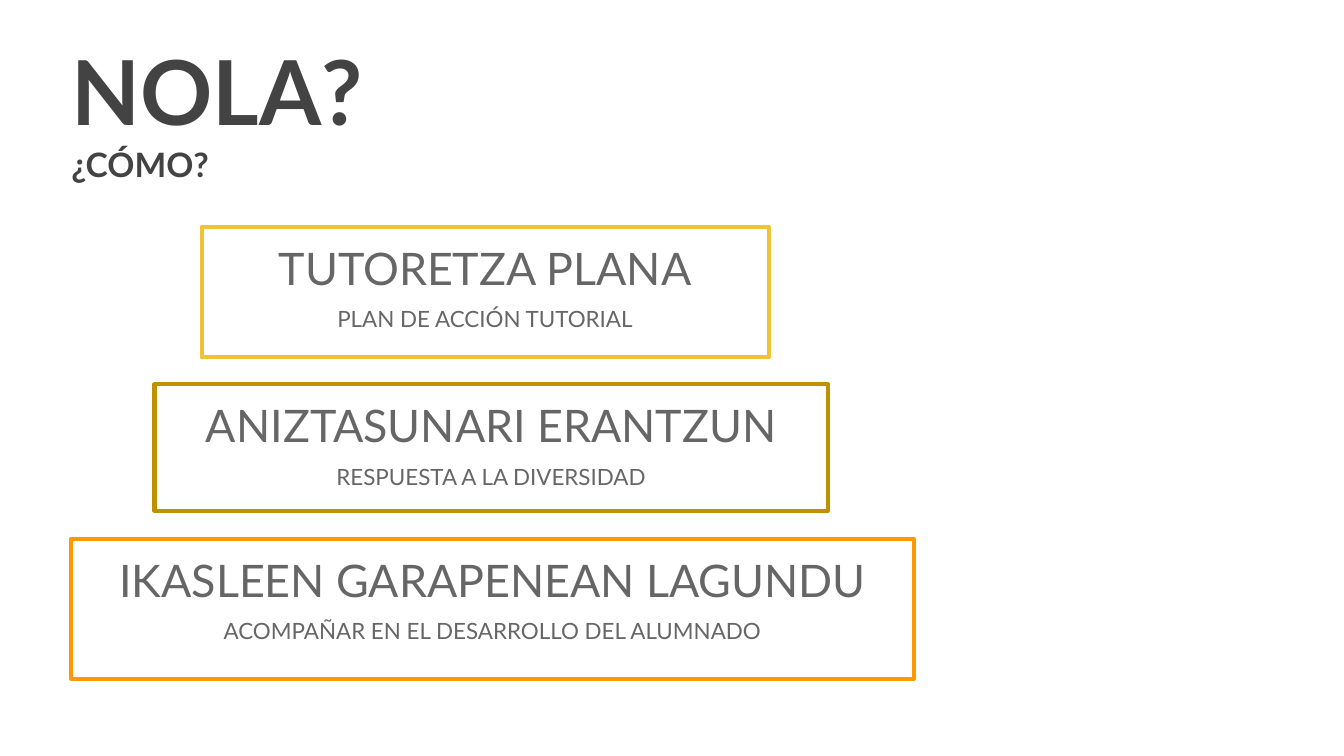
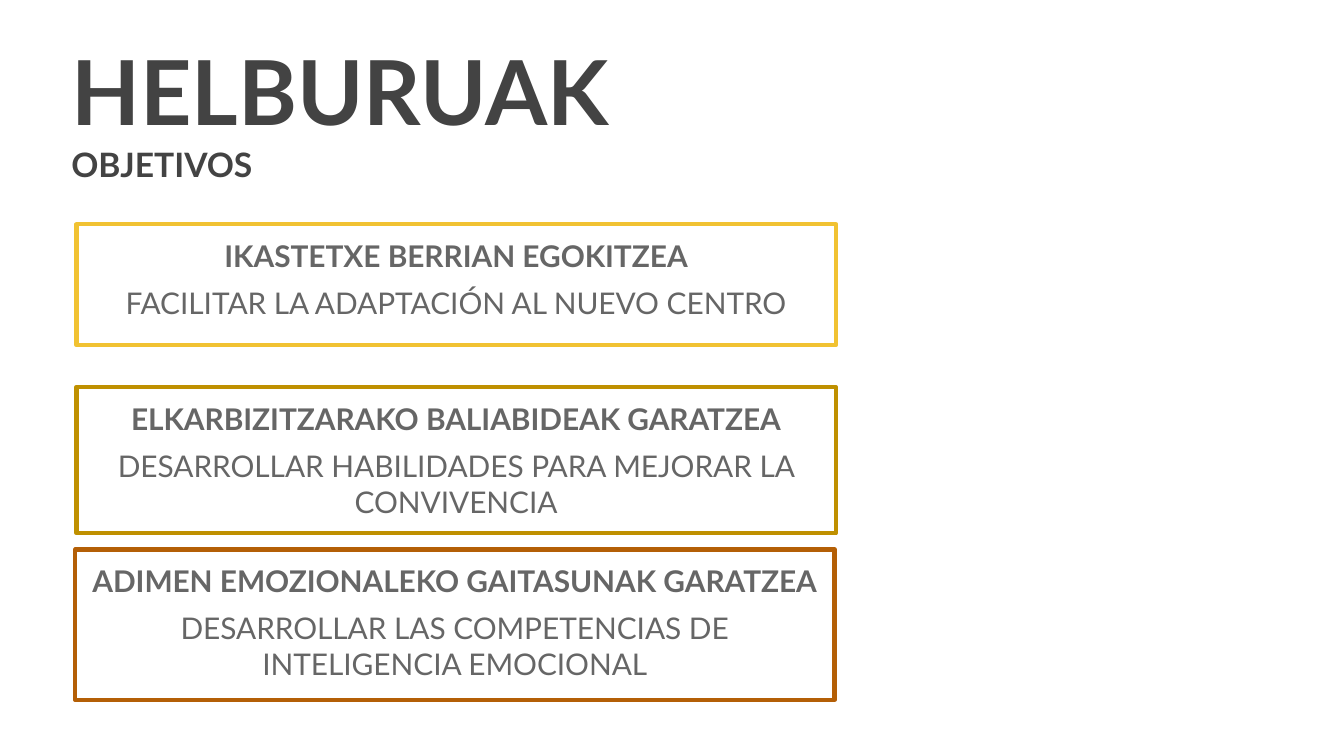
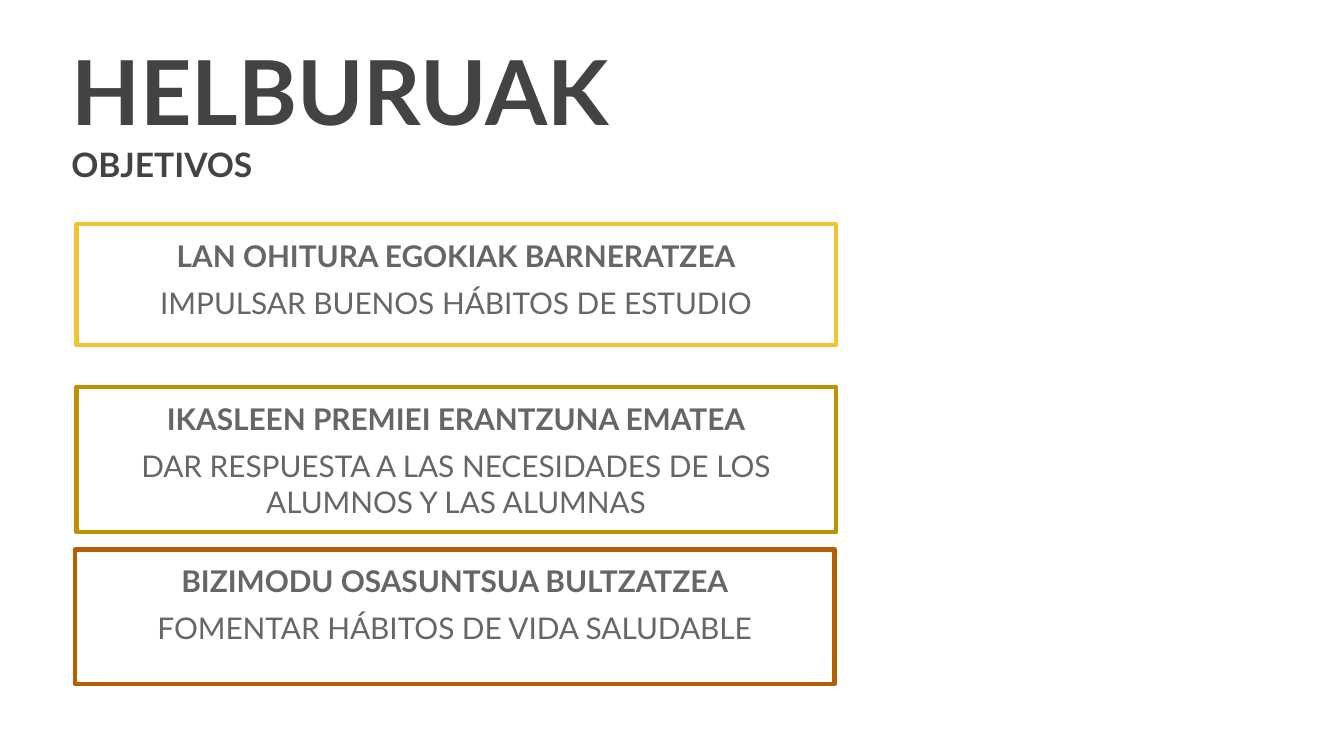
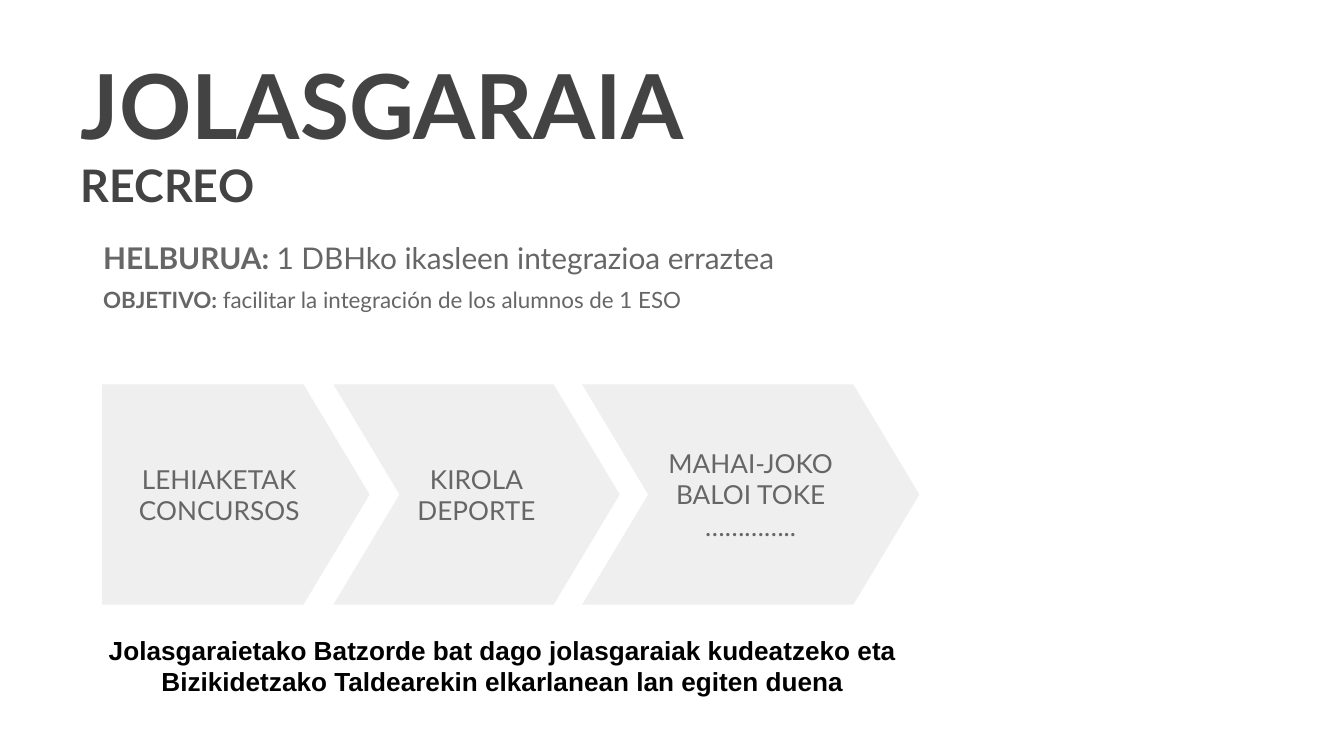
from pptx import Presentation
from pptx.dml.color import RGBColor
from pptx.enum.shapes import MSO_SHAPE as Preset
from pptx.enum.text import MSO_ANCHOR as Anchor, MSO_AUTO_SIZE as AutoSize, PP_ALIGN as Align
from pptx.util import Pt

TITLE_GREY = RGBColor(0x43, 0x43, 0x43)
TEXT_GREY = RGBColor(0x66, 0x66, 0x66)
ARROW_GREY = RGBColor(0xEF, 0xEF, 0xEF)
BLACK = RGBColor(0x00, 0x00, 0x00)
WHITE = RGBColor(0xFF, 0xFF, 0xFF)
YELLOW = RGBColor(0xF1, 0xC2, 0x32)
GOLD = RGBColor(0xBF, 0x90, 0x00)
ORANGE = RGBColor(0xFF, 0x99, 0x00)
BROWN = RGBColor(0xB4, 0x5F, 0x06)

TITLE_ONLY = 5
INSET = 7.2
GOAL_TOP, GOAL_STEP, GOAL_WIDTH = 120.2, 87.1, 406.8
ARROW_TOP, ARROW_HEIGHT = 205.9, 118.1


def span(text, size, bold=False, color=TEXT_GREY, name="Lato"):
    """Describe one run as its text and its font format."""
    return text, {"size": Pt(size), "bold": bold, "name": name}, color


def write(shape, lines, align=Align.CENTER, anchor=Anchor.TOP, gap=0, margin=INSET):
    """Fill a shape with paragraphs, each a list of spans."""
    frame = shape.text_frame
    frame_format = {
        "word_wrap": True, "auto_size": AutoSize.NONE, "vertical_anchor": anchor,
        "margin_left": Pt(INSET), "margin_right": Pt(INSET),
        "margin_top": Pt(margin), "margin_bottom": Pt(margin),
    }
    for key, value in frame_format.items():
        setattr(frame, key, value)
    for index, spans in enumerate(lines):
        para = frame.add_paragraph() if index else frame.paragraphs[0]
        para.alignment = align
        para.space_before = Pt(gap if index else 0)
        for text, font_format, color in spans:
            run = para.add_run()
            run.text = text
            for key, value in font_format.items():
                setattr(run.font, key, value)
            run.font.color.rgb = color


def add_page(deck, basque, spanish, place=(31, 38.2, 588.2, 67.7), spanish_size=18):
    """Add a slide with its two-language title."""
    page = deck.slides.add_slide(deck.slide_layouts[TITLE_ONLY])
    page.background.fill.solid()
    page.background.fill.fore_color.rgb = WHITE
    title = page.shapes.title
    for key, value in zip(("left", "top", "width", "height"), place):
        setattr(title, key, Pt(value))
    write(title, [[span(basque, 48, True, TITLE_GREY)],
                  [span(spanish, spanish_size, True, TITLE_GREY)]],
          align=Align.LEFT, anchor=Anchor.BOTTOM)
    return page


def add_preset(page, preset, place):
    shape = page.shapes.add_shape(preset, *map(Pt, place))
    shape.shadow.inherit = False
    return shape


def add_frame(page, place, color, lines):
    """Add an outlined box without fill."""
    box = add_preset(page, Preset.RECTANGLE, place)
    box.fill.background()
    box.line.color.rgb = color
    box.line.width = Pt(2.25)
    write(box, lines, gap=6)


def add_arrow(page, preset, left, width, words):
    arrow = add_preset(page, preset, (left, ARROW_TOP, width, ARROW_HEIGHT))
    arrow.adjustments[0] = 0.3
    arrow.fill.solid()
    arrow.fill.fore_color.rgb = ARROW_GREY
    arrow.line.fill.background()
    write(arrow, [[span(word, 14)] for word in words], anchor=Anchor.MIDDLE)


def add_text(page, place, lines, **layout):
    box = page.shapes.add_textbox(*map(Pt, place))
    write(box, lines, **layout)


def add_goals_page(deck, goals):
    """Add a slide of three goals, each with its box height and two texts."""
    page = add_page(deck, "HELBURUAK", "OBJETIVOS")
    outlines = ((41, YELLOW), (41, GOLD), (40.3, BROWN))
    for index, ((left, color), (height, basque, spanish)) in enumerate(zip(outlines, goals)):
        place = (left, GOAL_TOP + GOAL_STEP * index, GOAL_WIDTH, height)
        add_frame(page, place, color, [[span(basque, 16, True)], [span(spanish, 16)]])


def add_how_page(deck):
    page = add_page(deck, "NOLA?", "¿CÓMO?")
    steps = (
        ((108, 121.7, 303.8, 69.8), YELLOW, "TUTORETZA PLANA", "PLAN DE ACCIÓN TUTORIAL"),
        ((82.8, 205.9, 360.7, 67.7), GOLD, "ANIZTASUNARI ERANTZUN", "RESPUESTA A LA DIVERSIDAD"),
        ((38.2, 288.7, 451.4, 74.9), ORANGE, "IKASLEEN GARAPENEAN LAGUNDU",
         "ACOMPAÑAR EN EL DESARROLLO DEL ALUMNADO"),
    )
    for place, color, basque, spanish in steps:
        add_frame(page, place, color, [[span(basque, 24)], [span(spanish, 12)]])


def add_break_page(deck):
    page = add_page(deck, "JOLASGARAIA", "RECREO", (36, 52.6, 434.2, 67.7), 24)
    add_text(page, (48.2, 121, 443.5, 61.2), [
        [span("HELBURUA: ", 16, True), span("1 DBHko ikasleen integrazioa erraztea", 16)],
        [span("OBJETIVO: ", 12, True),
         span("facilitar la integración de los alumnos de 1 ESO", 12)],
    ], align=Align.LEFT, gap=6)
    activities = (
        (Preset.PENTAGON, 54.7, 143.3, ("LEHIAKETAK", "CONCURSOS")),
        (Preset.CHEVRON, 178.6, 153.4, ("KIROLA", "DEPORTE")),
        (Preset.CHEVRON, 311.8, 180.7, ("MAHAI-JOKO", "BALOI TOKE", "…………..")),
    )
    for activity in activities:
        add_arrow(page, *activity)
    committee = ("Jolasgaraietako Batzorde bat dago jolasgaraiak kudeatzeko eta "
                 "Bizikidetzako Taldearekin elkarlanean lan egiten duena")
    add_text(page, (31, 336.2, 476.6, 41), [[span(committee, 14, True, BLACK, "Arial")]],
             margin=3.6)


def main():
    deck = Presentation()
    deck.slide_width, deck.slide_height = Pt(720), Pt(405)
    add_how_page(deck)
    add_goals_page(deck, (
        (64.8, "IKASTETXE BERRIAN EGOKITZEA", "FACILITAR LA ADAPTACIÓN AL NUEVO CENTRO"),
        (78.5, "ELKARBIZITZARAKO BALIABIDEAK GARATZEA",
         "DESARROLLAR HABILIDADES PARA MEJORAR LA CONVIVENCIA"),
        (80.6, "ADIMEN EMOZIONALEKO GAITASUNAK GARATZEA",
         "DESARROLLAR LAS COMPETENCIAS DE INTELIGENCIA EMOCIONAL"),
    ))
    add_goals_page(deck, (
        (64.8, "LAN OHITURA EGOKIAK BARNERATZEA", "IMPULSAR BUENOS HÁBITOS DE ESTUDIO"),
        (77.8, "IKASLEEN PREMIEI ERANTZUNA EMATEA",
         "DAR RESPUESTA A LAS NECESIDADES DE LOS ALUMNOS Y LAS ALUMNAS"),
        (72, "BIZIMODU OSASUNTSUA BULTZATZEA", "FOMENTAR HÁBITOS DE VIDA SALUDABLE"),
    ))
    add_break_page(deck)
    deck.save("out.pptx")


if __name__ == "__main__":
    main()
